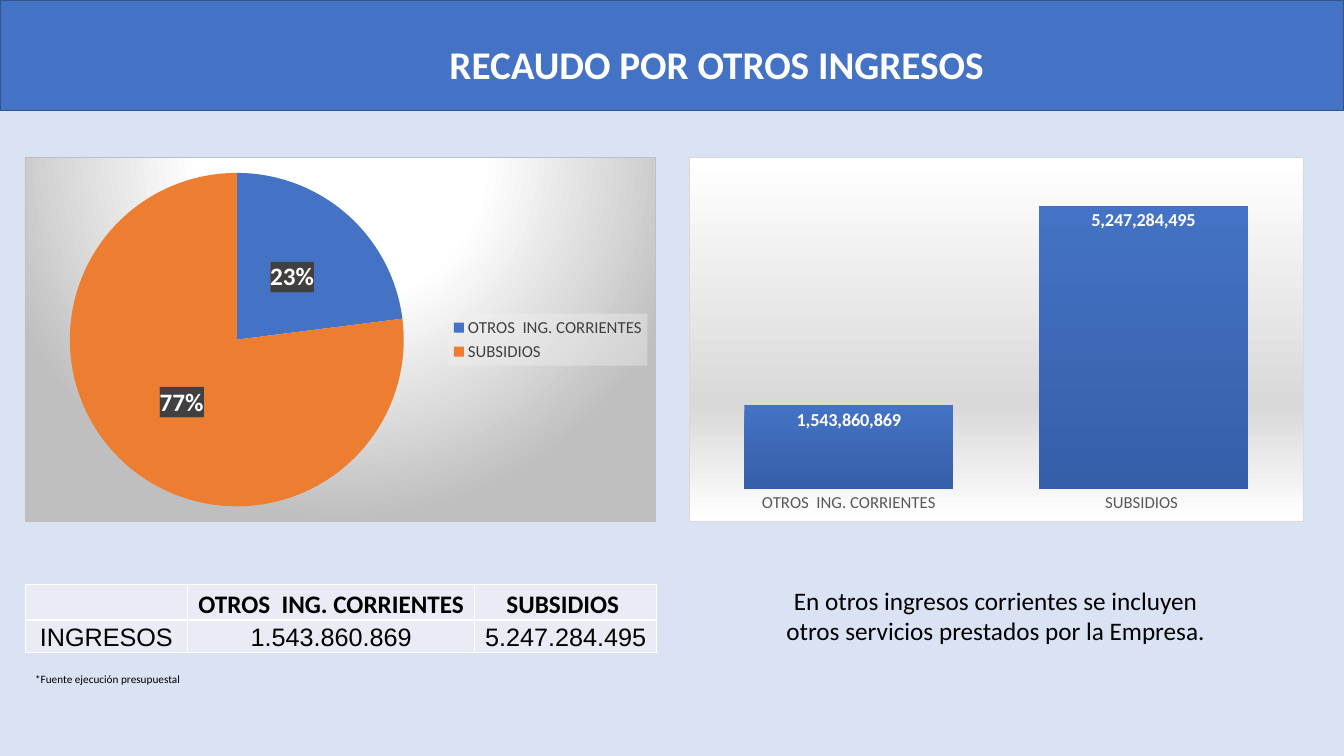
import pptx
import pptx.util
import pptx.chart.data
import pptx.dml.color
import pptx.enum.chart
import pptx.enum.shapes
import pptx.enum.text
import pptx.oxml
import pptx.oxml.ns

Inches, Pt = pptx.util.Inches, pptx.util.Pt
COLORS = {"bg": "DAE3F3", "blue": "4472C4", "blue_line": "325491", "blue_dark": "355FA9",
          "orange": "ED7D31", "white": "FFFFFF", "black": "000000", "cell": "E9EBF5",
          "gray": "D9D9D9", "silver": "BFBFBF", "axis": "595959", "legend": "404040",
          "pale": "F2F2F2"}
CATEGORIES = ["OTROS  ING. CORRIENTES", "SUBSIDIOS "]
AMOUNT = '_-* #,##0_-;\\-* #,##0_-;_-* "-"??_-;_-@_'
DOWN = '<a:lin ang="5400000" scaled="0"/>'
RADIAL = ('<a:path path="circle"><a:fillToRect l="50000" t="-80000" r="50000" '
          'b="180000"/></a:path>')


def rgb(name):
    return pptx.dml.color.RGBColor.from_string(COLORS[name])


def xml(tag, inner, attrs=""):
    """Parse one element in the drawing or chart namespace."""
    ns = pptx.oxml.ns.nsdecls("a", "c")
    return pptx.oxml.parse_xml(f"<{tag} {ns} {attrs}>{inner}</{tag}>")


def solid(name, extra=""):
    return f'<a:solidFill><a:srgbClr val="{COLORS[name]}">{extra}</a:srgbClr></a:solidFill>'


def gradient(stops, direction):
    gs = "".join(f'<a:gs pos="{pos * 1000}"><a:srgbClr val="{COLORS[name]}"/></a:gs>'
                 for pos, name in stops)
    return f"<a:gradFill><a:gsLst>{gs}</a:gsLst>{direction}</a:gradFill>"


def set_font(font, size, color, bold=False, name="Calibri"):
    font.size, font.bold, font.name = Pt(size), bold, name
    font.color.rgb = rgb(color)


def write(tf, text, size=18, color="black", bold=False, name="Calibri", align="LEFT"):
    tf.word_wrap = True
    p = tf.paragraphs[0]
    p.alignment = getattr(pptx.enum.text.PP_ALIGN, align)
    r = p.add_run()
    r.text = text
    set_font(r.font, size, color, bold, name)


def add_text(s, box, text, **fmt):
    sp = s.shapes.add_textbox(*map(Inches, box))
    write(sp.text_frame, text, **fmt)


def add_banner(s):
    rect = pptx.enum.shapes.MSO_SHAPE.RECTANGLE
    sp = s.shapes.add_shape(rect, 0, 0, Inches(13.33), Inches(1.1))
    sp.shadow.inherit = False
    sp.fill.solid()
    sp.fill.fore_color.rgb = rgb("blue")
    sp.line.color.rgb = rgb("blue_line")
    sp.line.width = Pt(1)


def add_table(s, box, widths, heights, rows):
    table = s.shapes.add_table(len(rows), len(widths), *map(Inches, box)).table
    table.first_row = table.horz_banding = False
    for col, width in zip(table.columns, widths):
        col.width = Inches(width)
    for i, values in enumerate(rows):
        table.rows[i].height = Inches(heights[i])
        for j, value in enumerate(values):
            cell = table.cell(i, j)
            cell.margin_left = cell.margin_right = cell.margin_top = cell.margin_bottom = 0
            cell.vertical_anchor = pptx.enum.text.MSO_ANCHOR.BOTTOM
            write(cell.text_frame, value, bold=i == 0,
                  name="Arial" if i else "Calibri", align="CENTER")
            tc_pr = cell._tc.get_or_add_tcPr()
            for side in ("a:lnL", "a:lnR", "a:lnT", "a:lnB"):
                tc_pr.append(xml(side, solid("white"), 'w="12700"'))
            cell.fill.solid()
            cell.fill.fore_color.rgb = rgb("cell")


def add_spPr(parent, inner):
    """Give a chart part its fill and line, ahead of its text properties."""
    parent.find(pptx.oxml.ns.qn("c:txPr")).addprevious(xml("c:spPr", inner))


def add_chart(s, kind, box, values, fill, border, plot_area):
    data = pptx.chart.data.CategoryChartData()
    data.categories = CATEGORIES
    data.add_series("Series 1", values)
    kind = getattr(pptx.enum.chart.XL_CHART_TYPE, kind)
    chart = s.shapes.add_chart(kind, *map(Inches, box), data).chart
    chart.has_title = chart.has_legend = False
    set_font(chart.font, 10, "black")
    add_spPr(chart._chartSpace, f'{fill}<a:ln w="9525">{solid(border)}</a:ln>')
    # Fixed plot area, as fractions of the chart
    layout = '<c:layoutTarget val="inner"/><c:xMode val="edge"/><c:yMode val="edge"/>'
    layout += "".join(f'<c:{key} val="{val}"/>' for key, val in zip("xywh", plot_area))
    area = chart._chartSpace.chart.plotArea
    for old in area.findall(pptx.oxml.ns.qn("c:layout")):
        area.remove(old)
    area.insert(0, xml("c:layout", f"<c:manualLayout>{layout}</c:manualLayout>"))
    chart.plots[0].vary_by_categories = len(chart.plots[0].categories) > 0 and \
        kind == pptx.enum.chart.XL_CHART_TYPE.PIE
    return chart


def add_labels(series, position, size, number_format):
    labels = series.data_labels
    labels.number_format, labels.number_format_is_linked = number_format, False
    labels.position = getattr(pptx.enum.chart.XL_LABEL_POSITION, position)
    set_font(labels.font, size, "white", True)
    return labels


def add_column_chart(s):
    fill = gradient([(0, "white"), (68, "gray"), (100, "white")], DOWN)
    chart = add_chart(s, "COLUMN_CLUSTERED", (6.83, 1.56, 6.1, 3.62),
                      (1543860869, 5247284495), fill, "gray", (0.02, 0.02, 0.96, 0.89))
    chart.plots[0].gap_width = 41
    series = chart.plots[0].series[0]
    bar_fill = gradient([(0, "blue"), (100, "blue_dark")], DOWN)
    series._element.get_or_add_spPr().append(xml("a:gradFill", "")) if not bar_fill else \
        series._element.get_or_add_spPr().append(xml("c:spPr", bar_fill)[0])
    add_labels(series, "INSIDE_END", 13, AMOUNT).show_value = True
    axis = chart.value_axis
    axis.visible = axis.has_major_gridlines = False
    axis.minimum_scale, axis.maximum_scale = 0, 6000000000
    axis = chart.category_axis
    axis.major_tick_mark = pptx.enum.chart.XL_TICK_MARK.NONE
    axis.format.line.fill.background()
    set_font(axis.tick_labels.font, 12, "axis")


def add_pie_chart(s):
    fill = gradient([(0, "white"), (39, "white"), (100, "silver")], RADIAL)
    chart = add_chart(s, "PIE", (0.25, 1.56, 6.26, 3.62), (23, 77), fill, "silver",
                      (0.07, 0.04, 0.53, 0.92))
    series = chart.plots[0].series[0]
    for i, name in enumerate(("blue", "orange")):
        point_fill = series.points[i].format.fill
        point_fill.solid()
        point_fill.fore_color.rgb = rgb(name)
    labels = add_labels(series, "CENTER", 18, "0%")
    labels.show_percentage, labels.show_value = True, False
    add_spPr(labels._element,
             f'<a:pattFill prst="dkVert"><a:fgClr><a:srgbClr val="{COLORS["legend"]}"/></a:fgClr>'
             f'<a:bgClr><a:srgbClr val="{COLORS["axis"]}"/></a:bgClr></a:pattFill>')
    # Legend on a translucent panel
    chart.has_legend = True
    legend = chart.legend
    legend.position = pptx.enum.chart.XL_LEGEND_POSITION.RIGHT
    legend.include_in_layout = False
    set_font(legend.font, 12, "legend")
    add_spPr(legend._element, solid("pale", '<a:alpha val="39000"/>'))


def main():
    prs = pptx.Presentation()
    prs.slide_width, prs.slide_height = Inches(13.33), Inches(7.5)
    s = prs.slides.add_slide(prs.slide_layouts[6])
    s.background.fill.solid()
    s.background.fill.fore_color.rgb = rgb("bg")

    # Header
    add_banner(s)
    add_text(s, (4.36, 0.35, 5.6, 0.57), "RECAUDO POR OTROS INGRESOS",
             size=28, color="white", bold=True)

    # Table and notes
    add_table(s, (0.25, 5.8, 6.26, 0.67), (1.61, 2.85, 1.8), (0.35, 0.32),
              [["", *CATEGORIES], ["INGRESOS", "1.543.860.869", "5.247.284.495"]])
    add_text(s, (7.65, 5.76, 4.45, 0.71), "En otros ingresos corrientes se incluyen "
             "otros servicios prestados por la Empresa.", align="CENTER")
    add_text(s, (0.25, 6.62, 1.66, 0.24), "*Fuente ejecución presupuestal", size=8)

    # Charts
    add_column_chart(s)
    add_pie_chart(s)
    prs.save("out.pptx")


if __name__ == "__main__":
    main()
